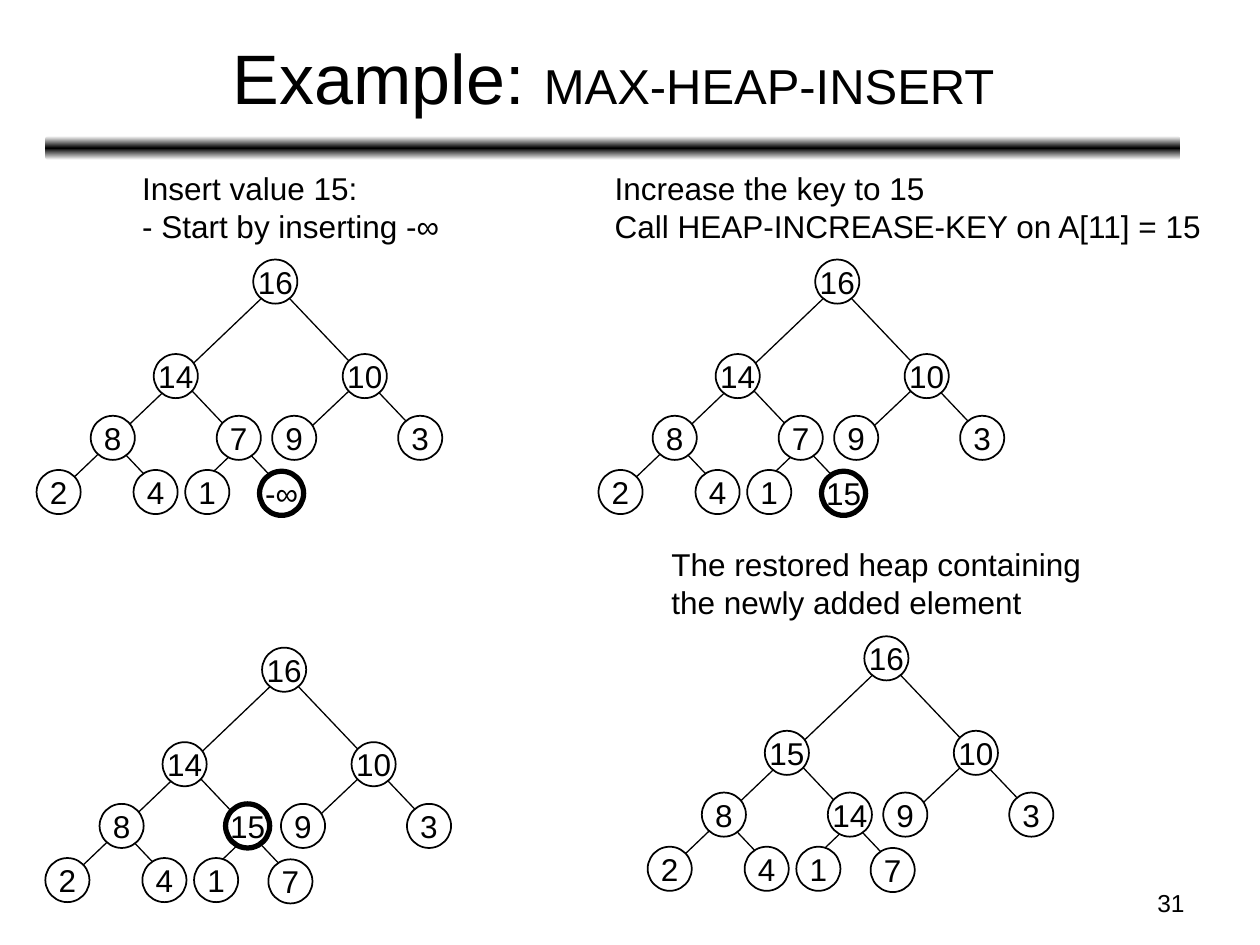
from copy import deepcopy

from pptx import Presentation
from pptx.dml.color import RGBColor
from pptx.enum.shapes import MSO_CONNECTOR, MSO_SHAPE
from pptx.enum.text import MSO_ANCHOR, PP_ALIGN
from pptx.oxml.ns import qn
from pptx.util import Pt

ELLIPSE = MSO_SHAPE.OVAL
ROUNDED = MSO_SHAPE.ROUNDED_RECTANGLE
STRAIGHT = MSO_CONNECTOR.STRAIGHT
CENTER, RIGHT, LEFT = PP_ALIGN.CENTER, PP_ALIGN.RIGHT, PP_ALIGN.LEFT
MIDDLE = MSO_ANCHOR.MIDDLE

EMU_PER_PX = 9144  # 100 px to the inch
FONT = "Arial"
BLACK, WHITE = "000000", "FFFFFF"
NODE_SIZE = 35

# Node corners relative to the tree, in heap order A[1] to A[11]
NODE_CORNERS = [
    (172, 0),
    (93, 75), (243, 75),
    (43, 124), (143, 124), (187, 124), (287, 124),
    (0, 167), (77, 167), (118, 167), (177, 168),
]
# Each edge line runs behind the nodes; the two longest pass through several
EDGES = [
    (18, 184, 193, 17), (313, 149, 180, 9),
    (162, 145, 109, 89), (205, 145, 261, 92),
    (103, 189, 50, 133), (124, 184, 169, 141), (203, 190, 150, 134),
]

# Tree corner, keys in heap order, index of the highlighted node
TREES = [
    (29, 206, "16 14 10 8 7 9 3 2 4 1 -∞", 10),
    (475, 206, "16 14 10 8 7 9 3 2 4 1 15", 10),
    (36, 514, "16 14 10 8 15 9 3 2 4 1 7", 4),
    (514, 505, "16 15 10 8 14 9 3 2 4 1 7", None),
]
CAPTIONS = [
    ((103, 129, 256, 70), "Insert value 15:\n- Start by inserting -∞"),
    ((478, 129, 489, 70),
     "Increase the key to 15\nCall HEAP-INCREASE-KEY on A[11] = 15"),
    ((523, 428, 345, 70),
     "The restored heap containing\nthe newly added element"),
]


def px(*lengths):
    return [length * EMU_PER_PX for length in lengths]


def color(value):
    return RGBColor.from_string(value)


def format_text(text_frame, size, alignment):
    for paragraph in text_frame.paragraphs:
        paragraph.alignment = alignment
        for run in paragraph.runs:
            run.font.name = FONT
            run.font.size = Pt(size)
            run.font.color.rgb = color(BLACK)


def add_title(slide, box):
    title = slide.shapes.title
    title.left, title.top, title.width, title.height = px(*box)
    text_frame = title.text_frame
    text_frame.vertical_anchor = MIDDLE
    paragraph = text_frame.paragraphs[0]
    for text in ("Example: ", "MAX-HEAP-INSERT"):
        paragraph.add_run().text = text
    format_text(text_frame, 40, CENTER)
    paragraph.runs[1].font.size = Pt(28)


def add_rule(slide, box):
    rule = slide.shapes.add_shape(ROUNDED, *px(*box))
    rule.shadow.inherit = False
    rule.line.fill.background()
    rule.fill.gradient()
    rule.fill.gradient_angle = 90
    # The default gradient has two stops; this one needs three
    stop_list = rule._element.spPr.find(".//" + qn("a:gsLst"))
    stop_list.append(deepcopy(stop_list[0]))
    stops = zip(rule.fill.gradient_stops, (0, 0.5, 1), (WHITE, BLACK, WHITE))
    for stop, position, value in stops:
        stop.position = position
        stop.color.rgb = color(value)


def add_label(slide, box, text, size=18, alignment=LEFT, wrap=False):
    label = slide.shapes.add_textbox(*px(*box))
    label.text_frame.word_wrap = wrap
    label.text_frame.text = text
    format_text(label.text_frame, size, alignment)


def add_edge(slide, start_x, start_y, end_x, end_y):
    edge = slide.shapes.add_connector(
        STRAIGHT, *px(start_x, start_y, end_x, end_y))
    edge.line.color.rgb = color(BLACK)
    edge.line.width = Pt(0.75)
    properties = edge._element.spPr
    properties.append(properties.makeelement(qn("a:effectLst"), {}))


def add_node(slide, left, top, key, highlighted):
    node = slide.shapes.add_shape(
        ELLIPSE, *px(left, top, NODE_SIZE, NODE_SIZE))
    node.shadow.inherit = False
    node.fill.solid()
    node.fill.fore_color.rgb = color(WHITE)
    node.line.color.rgb = color(BLACK)
    node.line.width = Pt(3 if highlighted else 1)
    text_frame = node.text_frame
    text_frame.word_wrap = False
    text_frame.vertical_anchor = MIDDLE
    text_frame.text = key
    format_text(text_frame, 18, CENTER)


def add_tree(slide, left, top, keys, highlighted):
    for start_x, start_y, end_x, end_y in EDGES:
        add_edge(slide, left + start_x, top + start_y,
                 left + end_x, top + end_y)
    for index, (key, (x, y)) in enumerate(zip(keys.split(), NODE_CORNERS)):
        add_node(slide, left + x, top + y, key, index == highlighted)


def main():
    presentation = Presentation()
    presentation.slide_width, presentation.slide_height = px(1000, 750)
    slide = presentation.slides.add_slide(presentation.slide_layouts[5])

    # Heading
    add_rule(slide, (36, 108, 901, 19))
    add_title(slide, (37, 11, 900, 99))

    # Heap after each step
    for tree in TREES:
        add_tree(slide, *tree)
    for box, text in CAPTIONS:
        add_label(slide, box, text)

    # Page number
    add_label(slide, (717, 700, 233, 35), "31", 14, RIGHT, wrap=True)
    presentation.save("out.pptx")


if __name__ == "__main__":
    main()
